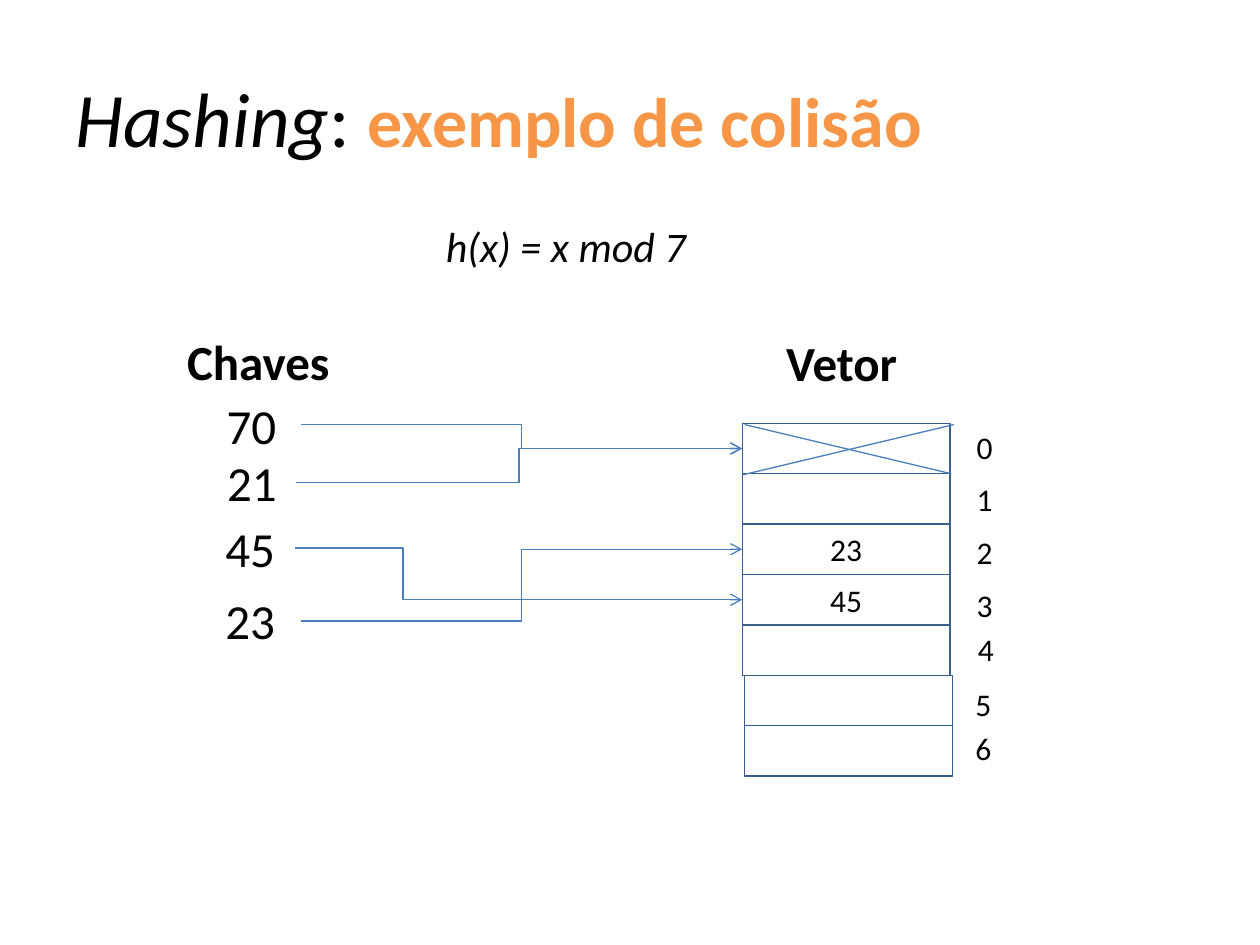
from lxml import etree
from pptx import Presentation
from pptx import util as u
from pptx.dml.color import RGBColor
from pptx.enum import shapes, text
from pptx.oxml.ns import qn

BLACK = RGBColor(0x00, 0x00, 0x00)
ORANGE = RGBColor(0xF7, 0x96, 0x46)
CELL_BORDER = RGBColor(0x3A, 0x5F, 0x8C)
ARROW_BLUE = RGBColor(0x4B, 0x7E, 0xBC)

COLUMNS, ROWS = 100, 75
CELL_LEFT, CELL_TOP, CELL_WIDTH, CELL_HEIGHT = 58.9, 33.6, 16.5, 4
SHIFTED_LEFT, SHIFTED_FROM = 59.1, 5

VECTOR = ["", "", "23", "45", "", "", ""]
INDEX_PLACES = [(75.6, 33.5), (75.6, 37.6), (75.6, 41.8), (75.6, 46),
                (75.7, 49.5), (75.5, 53.9), (75.5, 57.4)]
KEYS = [("70", 16.1, 30.9, 7.7), ("21", 16.5, 35.4, 7),
        ("45", 16.3, 40.7, 7.1), ("23", 15.7, 46.4, 8.3)]
ARROWS = [(23.9, 33.7, 0, 50000), (23.5, 38.3, 0, 50000),
          (23.4, 43.5, 3, 24200), (23.9, 49.3, 2, 50000)]


def add_run(paragraph, content, size=18, color=BLACK, bold=False, italic=False, font="Calibri"):
    """Append formatted text to a paragraph."""
    run = paragraph.add_run()
    run.text = content
    run.font.name = font
    run.font.size = u.Pt(size)
    run.font.color.rgb = color
    run.font.bold = bold
    run.font.italic = italic


class SlideBuilder:
    """Place styled elements on a slide divided into columns and rows."""

    def __init__(self, presentation):
        self.slide = presentation.slides.add_slide(presentation.slide_layouts[6])
        self.column = presentation.slide_width / COLUMNS
        self.row = presentation.slide_height / ROWS
        self.line_width = u.Pt(0.75)

    def place(self, left, top, width, height):
        """Convert grid units to slide lengths."""
        return (round(left * self.column), round(top * self.row),
                round(width * self.column), round(height * self.row))

    def title(self, parts, left, top, width, height):
        """Add a title made of (text, format) parts."""
        shape = self.slide.shapes.add_textbox(*self.place(left, top, width, height))
        shape.text_frame.word_wrap = True
        shape.text_frame.vertical_anchor = text.MSO_ANCHOR.MIDDLE
        for content, style in parts:
            add_run(shape.text_frame.paragraphs[0], content, **style)

    def centre(self, shape, content, **style):
        """Write one centred line in a shape."""
        frame = shape.text_frame
        frame.word_wrap = True
        frame.margin_left = frame.margin_right = 0
        frame.paragraphs[0].alignment = text.PP_ALIGN.CENTER
        add_run(frame.paragraphs[0], content, **style)

    def label(self, content, left, top, width, height, **style):
        """Add a centred text box."""
        shape = self.slide.shapes.add_textbox(*self.place(left, top, width, height))
        self.centre(shape, content, **style)

    def cell(self, content, left, top):
        """Add one outlined cell of the vector."""
        shape = self.slide.shapes.add_shape(
            shapes.MSO_SHAPE.RECTANGLE, *self.place(left, top, CELL_WIDTH, CELL_HEIGHT))
        shape.shadow.inherit = False
        shape.fill.background()
        shape.line.color.rgb = CELL_BORDER
        shape.line.width = self.line_width
        if content:
            self.centre(shape, content)

    def line(self, start_x, start_y, end_x, end_y, kind=shapes.MSO_CONNECTOR.STRAIGHT):
        """Add a connector without a shadow."""
        connector = self.slide.shapes.add_connector(
            kind, *self.place(start_x, start_y, end_x, end_y))
        connector.line.color.rgb = ARROW_BLUE
        connector.line.width = self.line_width
        etree.SubElement(connector.element.spPr, qn("a:effectLst"))
        return connector

    def bent_arrow(self, start_x, start_y, end_x, end_y, bend):
        """Add an elbow arrow that turns at the given bend."""
        connector = self.line(start_x, start_y, end_x, end_y, shapes.MSO_CONNECTOR.ELBOW)
        etree.SubElement(connector.line._get_or_add_ln(), qn("a:tailEnd"), type="arrow")
        guides = connector.element.spPr.find(qn("a:prstGeom")).get_or_add_avLst()
        etree.SubElement(guides, qn("a:gd"), name="adj1", fmla=f"val {bend}")


def main():
    """Build the hashing collision slide."""
    presentation = Presentation()
    presentation.slide_width, presentation.slide_height = u.Inches(10), u.Inches(7.5)
    builder = SlideBuilder(presentation)

    builder.title([("Hashing", {"size": 44, "italic": True}),
                   (": ", {"size": 44}),
                   ("exemplo de colisão", {"size": 40, "color": ORANGE, "bold": True})],
                  5, 3, 90, 12.5)
    builder.label("h(x) = x mod 7", 33.5, 17, 22.8, 5, size=24, italic=True)
    builder.label("Chaves", 13.8, 25.8, 13.4, 5.7, size=28, bold=True)
    builder.label("Vetor", 60.1, 25.9, 13.4, 5.7, size=28, bold=True)

    for key, left, top, width in KEYS:
        builder.label(key, left, top, width, 5.7, size=28)

    for index, (value, place) in enumerate(zip(VECTOR, INDEX_PLACES)):
        left = CELL_LEFT if index < SHIFTED_FROM else SHIFTED_LEFT
        builder.cell(value, left, CELL_TOP + index * CELL_HEIGHT)
        builder.label(str(index), *place, 5.1, 4)

    for start_x, start_y, index, bend in ARROWS:
        target = CELL_TOP + (index + 0.5) * CELL_HEIGHT
        builder.bent_arrow(start_x, start_y, CELL_LEFT, target, bend)

    builder.line(59.1, 33.7, 75.5, 37.6)
    builder.line(58.9, 37.7, 75.7, 33.7)

    presentation.save("out.pptx")


if __name__ == "__main__":
    main()
